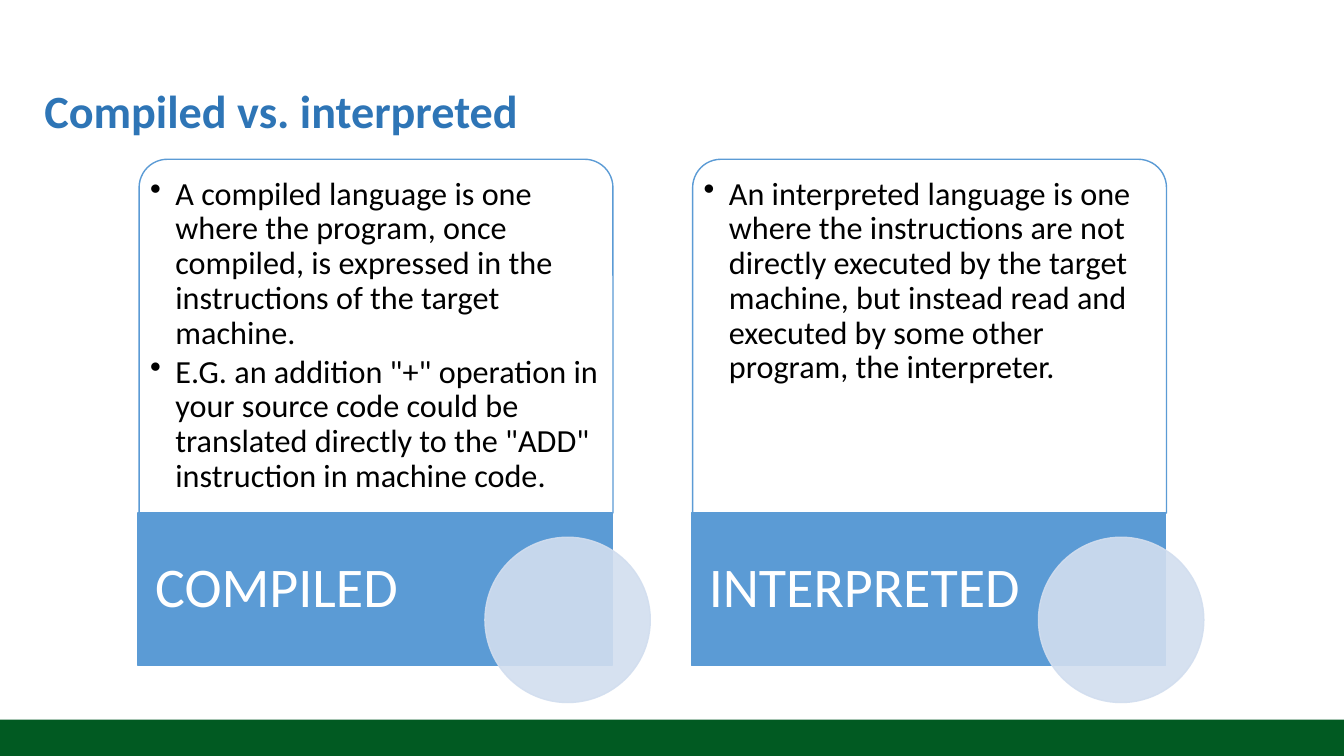
from dataclasses import dataclass

from lxml import etree
from pptx import Presentation
from pptx import util as u
from pptx.dml.color import RGBColor
from pptx.enum import shapes, text
from pptx.oxml.ns import qn

PX = 9144  # EMU per px, 100 px to the inch


@dataclass(frozen=True)
class Theme:
    font: str = "Calibri"
    title: str = "2E75B6"
    panel: str = "FFFFFF"
    accent: str = "5B9BD5"
    circle: str = "D2DEEF"
    footer: str = "015A22"
    body: str = "000000"
    label: str = "FFFFFF"
    title_size: int = 33
    body_size: int = 23
    label_size: int = 40
    opacity: int = 90


def set_opacity(fill_parent, percent):
    color = fill_parent.find(qn("a:solidFill"))[0]
    etree.SubElement(color, qn("a:alpha"), val=str(percent * 1000))


def write(tf, paragraphs, *, size, color, font, bold=False, bullet=False,
          after=0, anchor=text.MSO_ANCHOR.TOP, inset=(10, 5, 10, 5)):
    """Fill a text frame; inset is left, top, right, bottom in px."""
    tf.word_wrap = True
    tf.auto_size = text.MSO_AUTO_SIZE.NONE
    tf.vertical_anchor = anchor
    tf.margin_left, tf.margin_top, tf.margin_right, tf.margin_bottom = (
        side * PX for side in inset)
    for i, line in enumerate(paragraphs):
        p = tf.add_paragraph() if i else tf.paragraphs[0]
        p.alignment = text.PP_ALIGN.LEFT
        p.line_spacing = 0.9
        p.space_after = u.Pt(after)
        if bullet:
            p.level = 1
            pPr = p._p.get_or_add_pPr()
            pPr.set("marL", str(25 * PX))
            pPr.set("indent", str(-25 * PX))
            etree.SubElement(pPr, qn("a:buChar"), char="•")
        r = p.add_run()
        r.text = line
        r.font.name, r.font.size, r.font.bold = font, u.Pt(size), bold
        r.font.color.rgb = RGBColor.from_string(color)


class Deck:
    def __init__(self, theme):
        self.theme = theme
        self.prs = Presentation()
        self.prs.slide_width, self.prs.slide_height = 1333 * PX, 750 * PX
        self.s = self.prs.slides.add_slide(self.prs.slide_layouts[5])

    def title(self, line, x, y, w, h):
        sp = self.s.shapes.title
        sp.left, sp.top, sp.width, sp.height = (v * PX for v in (x, y, w, h))
        t = self.theme
        write(sp.text_frame, [line], size=t.title_size, color=t.title,
              font=t.font, bold=True, anchor=text.MSO_ANCHOR.MIDDLE)

    def shape(self, kind, x, y, w, h, *, fill, line=None, opacity=100,
              line_opacity=100, adjust=()):
        sp = self.s.shapes.add_shape(kind, *(v * PX for v in (x, y, w, h)))
        sp.shadow.inherit = False
        for i, value in enumerate(adjust):
            sp.adjustments[i] = value
        sp.fill.solid()
        sp.fill.fore_color.rgb = RGBColor.from_string(fill)
        if opacity < 100:
            set_opacity(sp._element.spPr, opacity)
        if line is None:
            sp.line.fill.background()
            return
        sp.line.color.rgb = RGBColor.from_string(line)
        sp.line.width = u.Pt(1)
        if line_opacity < 100:
            set_opacity(sp.line._get_or_add_ln(), line_opacity)

    def textbox(self, paragraphs, x, y, w, h, **fmt):
        sp = self.s.shapes.add_textbox(*(v * PX for v in (x, y, w, h)))
        write(sp.text_frame, paragraphs, font=self.theme.font, **fmt)

    def card(self, x, label, points):
        """Panel of bullets above a label bar with a circle on its corner."""
        t, kind = self.theme, shapes.MSO_SHAPE
        self.shape(kind.ROUND_2_SAME_RECTANGLE, x + 1, 158, 470, 351,
                   fill=t.panel, line=t.accent, opacity=t.opacity,
                   adjust=(0.08, 0))
        self.textbox(points, x + 9, 166, 454, 343, size=t.body_size,
                     color=t.body, bullet=True, after=3,
                     inset=(3, 10, 3, 3))
        self.shape(kind.RECTANGLE, x, 509, 470, 151,
                   fill=t.accent, line=t.accent)
        self.textbox([label], x, 509, 340, 151, size=t.label_size,
                     color=t.label, anchor=text.MSO_ANCHOR.MIDDLE,
                     inset=(17, 0, 0, 0))
        self.shape(kind.OVAL, x + 344, 533, 164, 164, fill=t.circle,
                   line=t.circle, opacity=t.opacity, line_opacity=t.opacity)


CARDS = [
    ("COMPILED", [
        "A compiled language is one where the program, once compiled, is "
        "expressed in the instructions of the target machine.",
        'E.G. an addition "+" operation in your source code could be '
        'translated directly to the "ADD" instruction in machine code.',
    ]),
    ("INTERPRETED", [
        "An interpreted language is one where the instructions are not "
        "directly executed by the target machine, but instead read and "
        "executed by some other program, the interpreter.",
    ]),
]


def main():
    deck = Deck(Theme())
    deck.shape(shapes.MSO_SHAPE.RECTANGLE, 0, 714, 1333, 36,
               fill=deck.theme.footer)
    deck.title("Compiled vs. interpreted", 34, 40, 1268, 145)
    for i, (label, points) in enumerate(CARDS):
        deck.card(137 + 549 * i, label, points)
    deck.prs.save("out.pptx")


if __name__ == "__main__":
    main()
